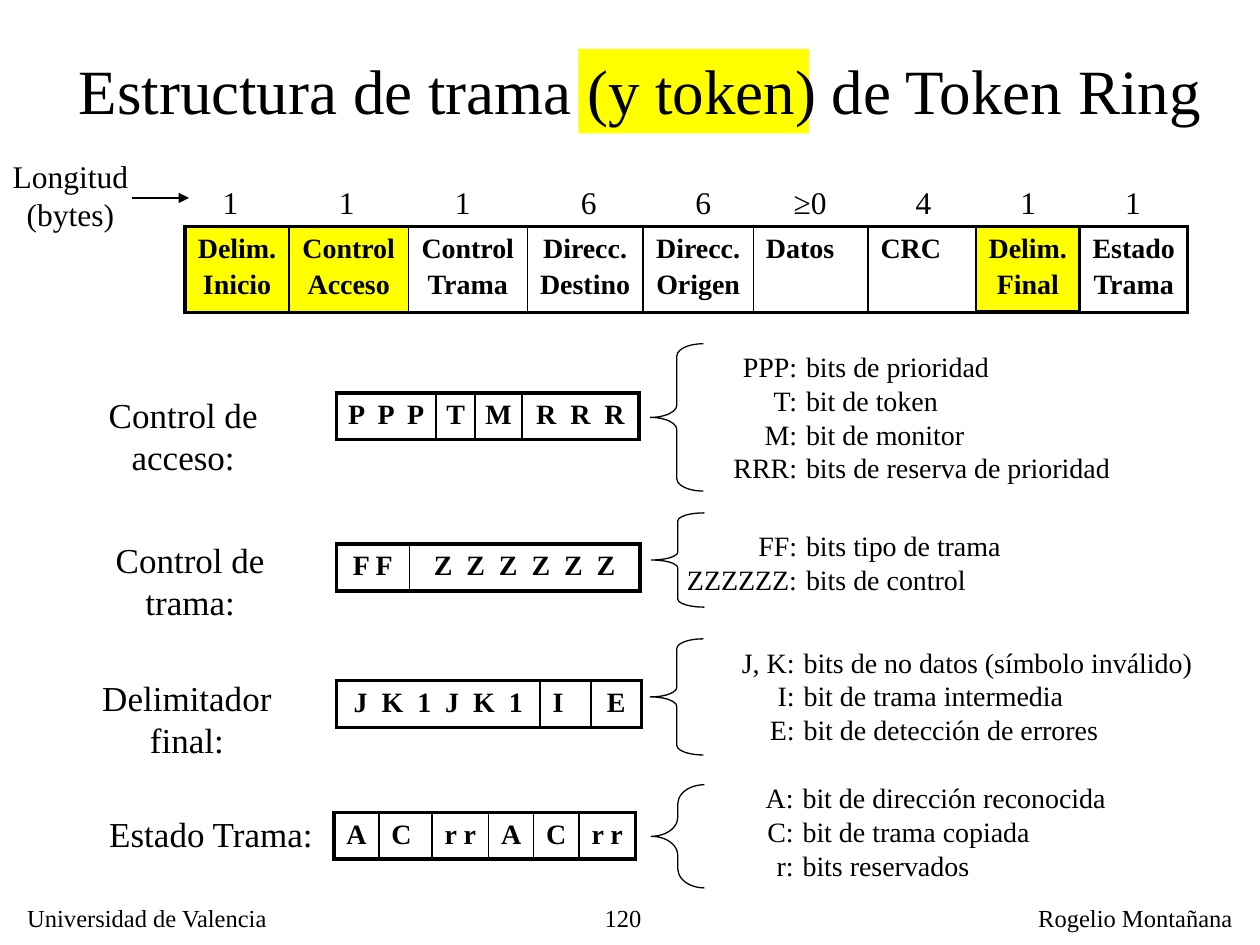
import pptx
import pptx.util
import pptx.oxml
import pptx.oxml.ns
import pptx.dml.color
import pptx.enum.shapes
import pptx.enum.text
import lxml.etree

Cm = pptx.util.Cm
Pt = pptx.util.Pt
Kind = pptx.enum.shapes.MSO_SHAPE
Align = pptx.enum.text.PP_ALIGN
qn = pptx.oxml.ns.qn
LEFT, MID, RIGHT = Align.LEFT, Align.CENTER, Align.RIGHT
BLACK, GOLD = "000000", "FFFF00"
FONT = "Times New Roman"

deck = pptx.Presentation()
deck.slide_width, deck.slide_height = Cm(25.4), Cm(19.05)
slide = deck.slides.add_slide(deck.slide_layouts[6])
shapes = slide.shapes


def color(code):
    return pptx.dml.color.RGBColor.from_string(code)


def write(frame, lines, size, align=LEFT, bold=False, gap=0):
    for i, line in enumerate(lines):
        para = frame.paragraphs[0] if i == 0 else frame.add_paragraph()
        para.text = line
        para.alignment = align
        para.font.name = FONT
        para.font.size = Pt(size)
        para.font.bold = bold
        para.font.color.rgb = color(BLACK)
        if i:
            para.space_before = Pt(gap)


for x, y, w, h, edge in [
    (11.66, 0.99, 4.65, 1.7, False),
    (19.66, 4.57, 2.08, 1.7, True),
    (3.73, 4.57, 4.5, 1.73, True),
]:
    mark = shapes.add_shape(Kind.RECTANGLE, Cm(x), Cm(y), Cm(w), Cm(h))
    mark.shadow.inherit = False
    mark.fill.solid()
    mark.fill.fore_color.rgb = color(GOLD)
    if edge:
        mark.line.color.rgb = color(BLACK)
        mark.line.width = Pt(0.75)
    else:
        mark.line.fill.background()

grids = [
    (3.73, 4.57, 1.73, [2.1, 2.4, 2.4, 2.33, 2.23, 2.31, 2.17, 2.1, 2.17],
     ["Delim.\nInicio", "Control\nAcceso", "Control\nTrama", "Direcc.\nDestino",
      "Direcc.\nOrigen", "Datos", "CRC", "Delim.\nFinal", "Estado\nTrama"], [5, 6]),
    (6.78, 7.92, 0.94, [2.01, 0.79, 0.94, 2.36], ["P  P  P", "T", "M", "R  R  R"], []),
    (6.78, 10.97, 0.94, [1.47, 4.65], ["F F", "Z  Z  Z  Z  Z  Z"], []),
    (6.78, 13.72, 0.94, [4.11, 1.02, 1.02], ["J  K  1  J  K  1", "I", "E"], [1]),
    (6.73, 16.38, 0.94, [0.91, 1.07, 1.14, 0.91, 0.91, 1.14],
     ["A", "C", "r r", "A", "C", "r r"], [1]),
]
for x, y, h, widths, names, flush in grids:
    table = shapes.add_table(1, len(widths), Cm(x), Cm(y), Cm(sum(widths)), Cm(h)).table
    table.first_row = False
    table.horz_banding = False
    table.rows[0].height = Cm(h)
    last = len(widths) - 1
    for i, (wide, name) in enumerate(zip(widths, names)):
        table.columns[i].width = Cm(wide)
        cell = table.cell(0, i)
        cell.margin_left = Cm(0.25 if i in flush else 0.15)
        cell.margin_right = Cm(0.15)
        cell.margin_top = cell.margin_bottom = Cm(0.13)
        write(cell.text_frame, name.split("\n"), 16, LEFT if i in flush else MID, True, 3.2)
        props = cell._tc.get_or_add_tcPr()
        for side, thick in [("L", i == 0), ("R", i == last), ("T", True), ("B", True)]:
            width = Pt(2.25 if thick else 1)
            line = lxml.etree.SubElement(props, qn("a:ln" + side), w=str(int(width)))
            fill = lxml.etree.SubElement(line, qn("a:solidFill"))
            lxml.etree.SubElement(fill, qn("a:srgbClr"), val=BLACK)
        cell.fill.background()

texts = [
    (10.49, 18.08, 2.69, 0.79, ["120"], 14, RIGHT),
    (0.3, 18.08, 5.41, 0.84, ["Universidad de Valencia"], 14, LEFT),
    (20.68, 18.08, 4.42, 0.84, ["Rogelio Montañana"], 14, LEFT),
    (1.27, 0.91, 23.27, 1.78, ["Estructura de trama (y token) de Token Ring"], 36, MID),
    (0, 3.05, 2.84, 1.78, ["Longitud", "(bytes)"], 18, MID),
]
for x, count in zip(
    [4.24, 6.58, 8.92, 11.46, 13.77, 15.75, 18.21, 20.32, 22.43],
    ["1", "1", "1", "6", "6", "≥0", "4", "1", "1"],
):
    texts.append((x, 3.56, 0.84 if len(count) == 1 else 1.17, 1.02, [count], 18, LEFT))

for x, y, w, label in [
    (0.81, 7.8, 5.77, "Control de acceso:"),
    (1.09, 10.74, 5.49, "Control de trama:"),
    (0.99, 13.51, 5.56, "Delimitador final:"),
    (1.93, 16.26, 4.65, "Estado Trama:"),
]:
    texts.append((x, y, w, 1.09, [label], 20, MID))

for x, y, split, w, h, keys, notes in [
    (14.53, 6.93, 16, 6.68, 2.97, ["PPP:", "T:", "M:", "RRR:"],
     ["bits de prioridad", "bit de token", "bit de monitor", "bits de reserva de prioridad"]),
    (13.59, 10.54, 16, 4.47, 1.63, ["FF:", "ZZZZZZ:"],
     ["bits tipo de trama", "bits de control"]),
    (14.68, 12.88, 15.95, 8.38, 2.29, ["J, K:", "I:", "E:"],
     ["bits de no datos (símbolo inválido)", "bit de trama intermedia",
      "bit de detección de errores"]),
    (15.16, 15.62, 15.93, 6.65, 2.29, ["A:", "C:", "r:"],
     ["bit de dirección reconocida", "bit de trama copiada", "bits reservados"]),
]:
    texts.append((x, y, split + 0.32 - x, h, keys, 16, RIGHT))
    texts.append((split, y, w, h, notes, 16, LEFT))

for x, y, w, h, lines, size, align in texts:
    box = shapes.add_textbox(Cm(x), Cm(y), Cm(w), Cm(h))
    frame = box.text_frame
    frame.word_wrap = False
    if size == 20 and w > 5:
        frame.word_wrap = True
        frame.margin_left = frame.margin_right = Cm(0.9)
    write(frame, lines, size, align)

arrow = shapes.add_connector(
    pptx.enum.shapes.MSO_CONNECTOR.STRAIGHT, Cm(2.67), Cm(3.99), Cm(3.81), Cm(3.99))
arrow.line.color.rgb = color(BLACK)
arrow.line.width = Pt(0.75)
lxml.etree.SubElement(arrow.line._get_or_add_ln(), qn("a:tailEnd"), type="triangle")
lxml.etree.SubElement(arrow._element.spPr, qn("a:effectLst"))

for x, y, h, curve in [
    (13.11, 6.93, 2.97, 0.23),
    (13.13, 10.34, 1.9, 0.15),
    (13.11, 12.88, 2.34, 0.18),
    (13.13, 15.82, 2.08, 0.36),
]:
    brace = shapes.add_shape(Kind.LEFT_BRACE, Cm(x), Cm(y), Cm(1.07), Cm(h))
    brace.shadow.inherit = False
    brace.adjustments[0] = curve
    brace.fill.background()
    brace.line.color.rgb = color(BLACK)
    brace.line.width = Pt(0.75)

deck.save("out.pptx")
